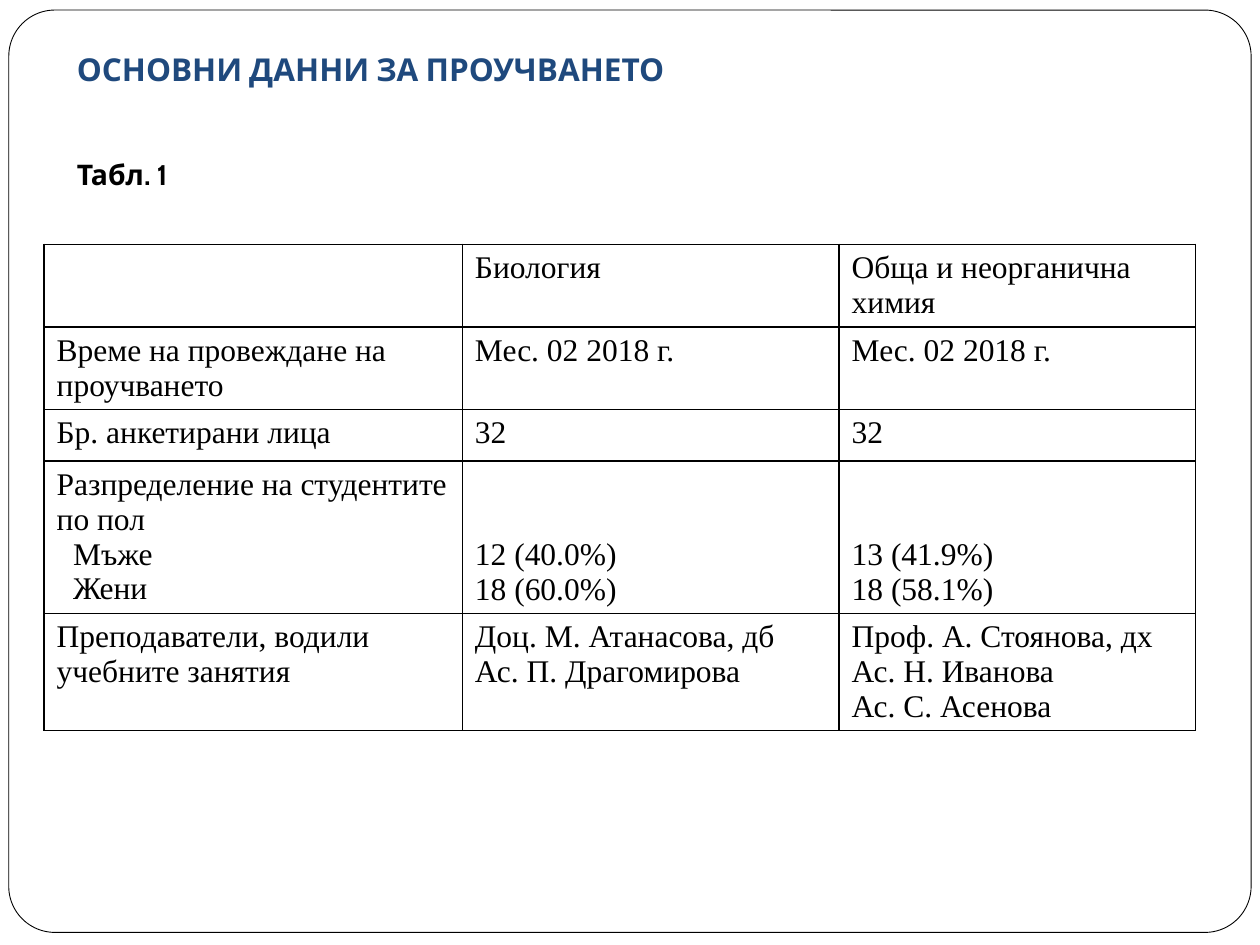
"""Build the slide with the basic data of the survey."""
import pptx
import pptx.dml.color
import pptx.enum.shapes
import pptx.enum.text
import pptx.oxml
import pptx.oxml.ns
import pptx.util

Inches, Pt = pptx.util.Inches, pptx.util.Pt
ANCHOR = pptx.enum.text.MSO_ANCHOR
WIDTH, HEIGHT = 10, 7.5
BLACK, WHITE, NAVY = "000000", "FFFFFF", "1F497D"

TITLE = "ОСНОВНИ ДАННИ ЗА ПРОУЧВАНЕТО"
CAPTION = "Табл. 1"
GENDER_ROW = 3
ROWS = [
    ([], ["Биология"], ["Обща и неорганична химия"]),
    (["Време на провеждане на проучването"], ["Мес. 02 2018 г."], ["Мес. 02 2018 г."]),
    (["Бр. анкетирани лица"], ["32"], ["32"]),
    (["Разпределение на студентите по пол", "Мъже", "Жени"],
     ["12 (40.0%)", "18 (60.0%)"], ["13 (41.9%)", "18 (58.1%)"]),
    (["Преподаватели, водили учебните занятия"],
     ["Доц. М. Атанасова, дб", "Ас. П. Драгомирова"],
     ["Проф. А. Стоянова, дх", "Ас. Н. Иванова", "Ас. С. Асенова"]),
]
COLUMN_WIDTHS = [3.32, 2.99, 2.83]
ROW_HEIGHTS = [0.65, 0.65, 0.41, 1.21, 0.93]


def color(value):
    return pptx.dml.color.RGBColor.from_string(value)


def write(frame, text, first=True, size=18, font="Times New Roman", fill=BLACK,
          bold=False, before=0, indent=0):
    para = frame.paragraphs[0] if first else frame.add_paragraph()
    para.alignment = pptx.enum.text.PP_ALIGN.LEFT
    para.space_before = Pt(before)
    if indent:
        para._p.get_or_add_pPr().set("marL", str(Inches(indent)))
    span = para.add_run()
    span.text = text
    span.font.size, span.font.name, span.font.bold = Pt(size), font, bold
    span.font.color.rgb = color(fill)


def add_borders(cell):
    properties = cell._tc.get_or_add_tcPr()
    for position, side in enumerate(("lnL", "lnR", "lnT", "lnB")):
        properties.insert(position, pptx.oxml.parse_xml(
            f'<a:{side} {pptx.oxml.ns.nsdecls("a")} w="{Pt(1)}"><a:solidFill>'
            f'<a:srgbClr val="{BLACK}"/></a:solidFill></a:{side}>'))


def add_frame(page):
    box = page.shapes.add_shape(
        pptx.enum.shapes.MSO_SHAPE.ROUNDED_RECTANGLE,
        Inches(0.07), Inches(0.08), Inches(WIDTH - 0.14), Inches(HEIGHT - 0.18))
    box.adjustments[0] = 0.05
    box.shadow.inherit = False
    box.fill.solid()
    box.fill.fore_color.rgb = color(WHITE)
    box.line.color.rgb = color(BLACK)
    box.line.width = Pt(0.5)
    page.shapes._spTree.insert(2, box._element)


def fill_title(page):
    box = page.shapes.title
    box.left, box.top, box.width, box.height = map(Inches, (0.51, 0.3, 8.32, 1.32))
    frame = box.text_frame
    frame.auto_size = pptx.enum.text.MSO_AUTO_SIZE.NONE
    frame.vertical_anchor = ANCHOR.BOTTOM
    frame.margin_bottom = Inches(0.1)
    write(frame, TITLE, font="Cabin", fill=NAVY, bold=True)
    write(frame, CAPTION, first=False, size=16.2, font="Cabin", bold=True, before=40)


def add_data_table(page):
    table = page.shapes.add_table(
        len(ROWS), len(COLUMN_WIDTHS), Inches(0.35), Inches(1.94),
        Inches(sum(COLUMN_WIDTHS)), Inches(sum(ROW_HEIGHTS))).table
    table.first_row = table.horz_banding = False
    for column, width in zip(table.columns, COLUMN_WIDTHS):
        column.width = Inches(width)
    for r, (row, height) in enumerate(zip(ROWS, ROW_HEIGHTS)):
        table.rows[r].height = Inches(height)
        for c, lines in enumerate(row):
            cell = table.cell(r, c)
            cell.fill.solid()
            cell.fill.fore_color.rgb = color(WHITE)
            add_borders(cell)
            is_gender = r == GENDER_ROW
            cell.vertical_anchor = ANCHOR.BOTTOM if is_gender and c else ANCHOR.TOP
            for number, line in enumerate(lines):
                indented = is_gender and c == 0 and number
                write(cell.text_frame, line, first=number == 0,
                      indent=0.13 if indented else 0)


def main():
    deck = pptx.Presentation()
    deck.slide_width, deck.slide_height = Inches(WIDTH), Inches(HEIGHT)
    page = deck.slides.add_slide(deck.slide_layouts[5])
    add_frame(page)
    fill_title(page)
    add_data_table(page)
    deck.save("out.pptx")


if __name__ == "__main__":
    main()
